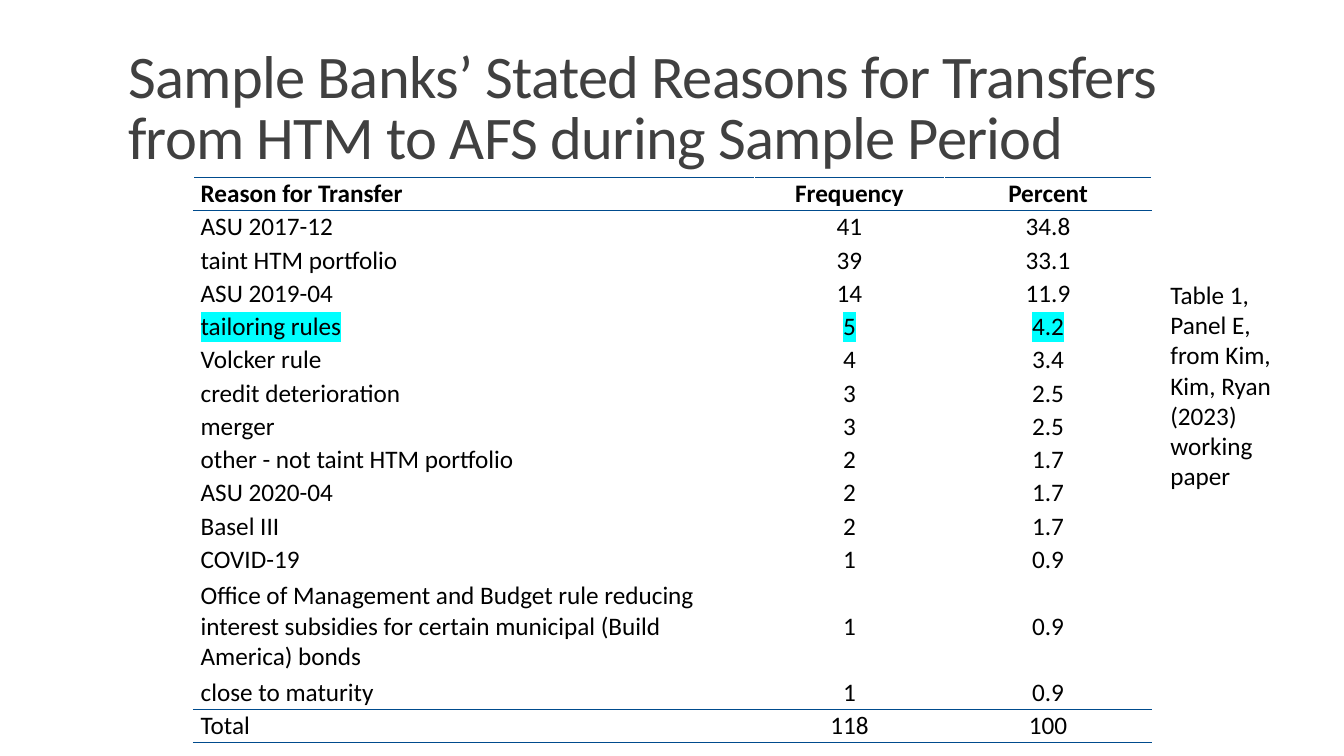
from lxml.etree import SubElement
from pptx import Presentation
from pptx.dml.color import RGBColor
from pptx.enum.text import MSO_ANCHOR, MSO_AUTO_SIZE, PP_ALIGN
from pptx.oxml import parse_xml
from pptx.oxml.ns import nsdecls, qn
from pptx.util import Inches, Pt

COLORS = {"title": "404040", "text": "000000", "rule": "004B8D", "mark": "00FFFF"}
HEAD = ("Reason for Transfer", "Frequency", "Percent")
REASONS = [
    ("ASU 2017-12", "41", "34.8"),
    ("taint HTM portfolio", "39", "33.1"),
    ("ASU 2019-04", "14", "11.9"),
    ("tailoring rules", "5", "4.2"),
    ("Volcker rule", "4", "3.4"),
    ("credit deterioration", "3", "2.5"),
    ("merger", "3", "2.5"),
    ("other - not taint HTM portfolio", "2", "1.7"),
    ("ASU 2020-04", "2", "1.7"),
    ("Basel III", "2", "1.7"),
    ("COVID-19", "1", "0.9"),
    ("Office of Management and Budget rule reducing interest subsidies "
     "for certain municipal (Build America) bonds", "1", "0.9"),
    ("close to maturity", "1", "0.9"),
]
TOTAL = ("Total", "118", "100")
MARKED = "tailoring rules"
WIDTHS = (5.56, 1.89, 2.05)
ROW = 0.33


def write(frame, text, size=18, color="text", bold=False, align=PP_ALIGN.LEFT,
          mark=None, track=None, lead=None):
    para = frame.paragraphs[0]
    para.alignment = align
    if lead:
        para.line_spacing = lead
    run = para.add_run()
    run.text = text
    font = run.font
    font.size, font.bold, font.name = Pt(size), bold, "Calibri"
    font.color.rgb = RGBColor.from_string(COLORS[color])
    props = run.font._element
    if track:
        props.set("spc", str(round(track * 100)))
    if mark:
        light = SubElement(props, qn("a:highlight"))
        SubElement(light, qn("a:srgbClr")).set("val", COLORS[mark])
        props.find(qn("a:solidFill")).addnext(light)


def rule(cell, sides):
    """Draw lines on the given sides of a cell, top before bottom."""
    props = cell._tc.get_or_add_tcPr()
    for spot, side in enumerate(sides):
        props.insert(spot, parse_xml(
            f'<a:ln{side} {nsdecls("a")} w="12700"><a:solidFill>'
            f'<a:srgbClr val="{COLORS["rule"]}"/></a:solidFill></a:ln{side}>'))


def add_title(slide, left, top, width, height):
    title = slide.shapes.title
    title.left, title.top = Inches(left), Inches(top)
    title.width, title.height = Inches(width), Inches(height)
    frame = title.text_frame
    frame.word_wrap = True
    frame.auto_size = MSO_AUTO_SIZE.NONE
    frame.vertical_anchor = MSO_ANCHOR.BOTTOM
    write(frame, "Sample Banks’ Stated Reasons for Transfers "
          "from HTM to AFS during Sample Period",
          size=43.2, color="title", track=-0.5, lead=0.85)


def add_reasons(slide, left, top, width, height):
    rows = [HEAD, *REASONS, TOTAL]
    last = len(rows) - 1
    table = slide.shapes.add_table(
        len(rows), len(HEAD), Inches(left), Inches(top),
        Inches(width), Inches(height)).table
    table.first_row = table.horz_banding = False
    for col, wide in zip(table.columns, WIDTHS):
        col.width = Inches(wide)
    sides = {0: "TB", 1: "T", last - 1: "B", last: "TB"}
    for r, row in enumerate(rows):
        lines = 3 if len(row[0]) > 60 else 1
        table.rows[r].height = Inches(ROW * lines)
        for c, text in enumerate(row):
            cell = table.cell(r, c)
            cell.fill.background()
            cell.margin_left = cell.margin_right = Inches(0.07)
            cell.margin_top = cell.margin_bottom = 0
            cell.vertical_anchor = MSO_ANCHOR.MIDDLE
            write(cell.text_frame, text, bold=r == 0,
                  align=PP_ALIGN.CENTER if c else PP_ALIGN.LEFT,
                  mark="mark" if row[0] == MARKED else None)
            rule(cell, sides.get(r, ""))


def add_credit(slide, left, top, width, height):
    box = slide.shapes.add_textbox(
        Inches(left), Inches(top), Inches(width), Inches(height))
    frame = box.text_frame
    frame.word_wrap = True
    frame.auto_size = MSO_AUTO_SIZE.SHAPE_TO_FIT_TEXT
    write(frame, "Table 1, Panel E, from Kim, Kim, Ryan (2023) working paper")


def main():
    deck = Presentation()
    deck.slide_width, deck.slide_height = Inches(13.33), Inches(7.5)
    slide = deck.slides.add_slide(deck.slide_layouts[5])
    add_title(slide, 1.17, 0.75, 11, 1.01)
    add_reasons(slide, 1.92, 1.76, sum(WIDTHS), 5.61)
    add_credit(slide, 11.51, 2.72, 1.43, 2.22)
    deck.save("out.pptx")


if __name__ == "__main__":
    main()
